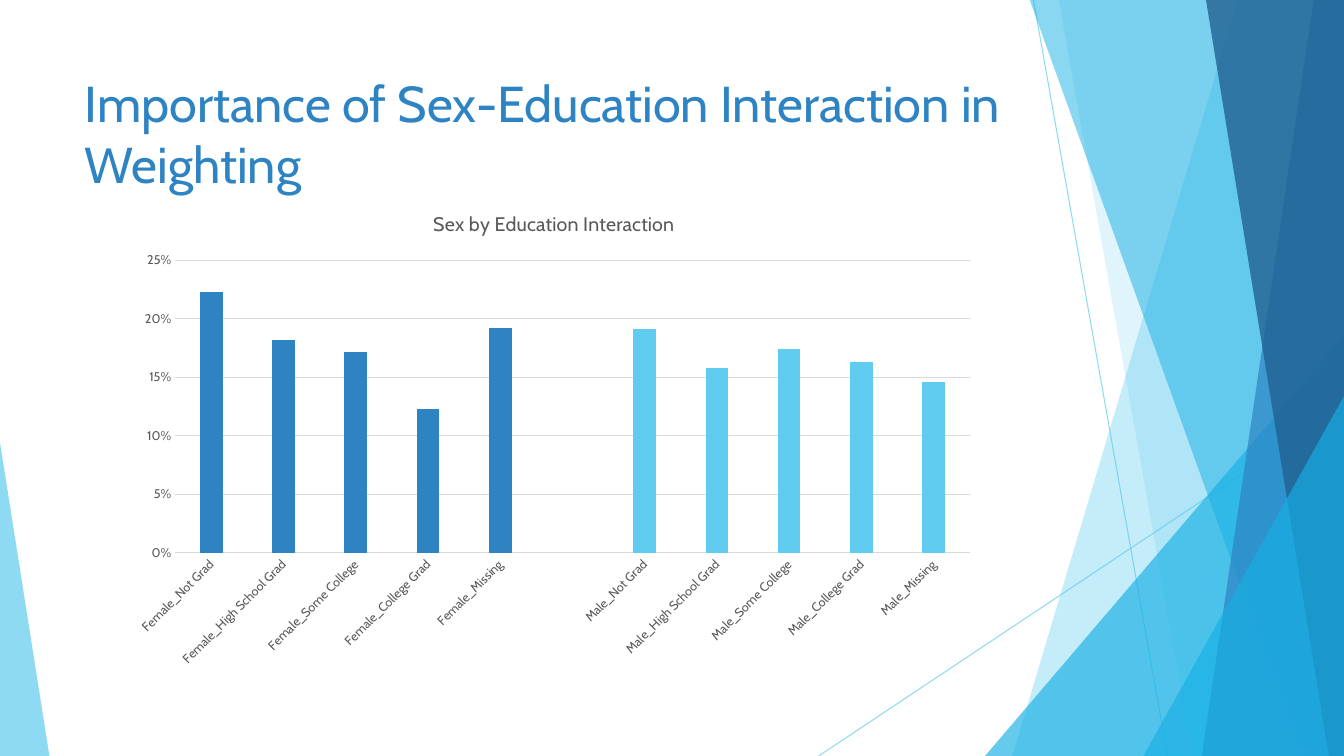
from lxml import etree
from pptx import Presentation
from pptx.chart.data import CategoryChartData
from pptx.dml.color import RGBColor
from pptx.enum.chart import XL_CHART_TYPE, XL_TICK_MARK
from pptx.enum.shapes import MSO_CONNECTOR, MSO_SHAPE
from pptx.enum.text import MSO_ANCHOR, MSO_AUTO_SIZE, PP_ALIGN
from pptx.oxml.ns import qn
from pptx.util import Pt

COLUMNS = XL_CHART_TYPE.COLUMN_CLUSTERED
NO_TICK = XL_TICK_MARK.NONE
STRAIGHT = MSO_CONNECTOR.STRAIGHT
TRIANGLE = MSO_SHAPE.ISOSCELES_TRIANGLE
TOP = MSO_ANCHOR.TOP
NO_FIT = MSO_AUTO_SIZE.NONE
LEFT = PP_ALIGN.LEFT

PX = 9144
WIDTH, HEIGHT = 1333, 750
FONT = "Cabin"
BLUE, SKY, CYAN, NAVY = "2E83C3", "5FCBEF", "17B0E4", "226292"
GRAY, GRID = "595959", "D9D9D9"

TITLE = "Importance of Sex-Education Interaction in Weighting"
TITLE_BOX = (74, 67, 940, 144)
CHART_TITLE = "Sex by Education Interaction"
CHART_BOX = (120, 190, 859, 481)
LEVELS = ["Not Grad", "High School Grad", "Some College", "College Grad", "Missing"]
FEMALE = [0.223, 0.182, 0.171, 0.123, 0.192]
MALE = [0.191, 0.158, 0.174, 0.163, 0.146]

RAYS = [((1025, 0), (1158, HEIGHT)), ((WIDTH, 403), (812, HEIGHT))]
BAND, WEDGE = "band", "wedge"
FACETS = [
    (BAND, (1228, 1004), SKY, 36),
    (BAND, (1050, 1183), SKY, 20),
    (WEDGE, (977, 333, 356, 417, 1), CYAN, 66),
    (BAND, (1021, 1291), CYAN, 50),
    (BAND, (1303, 1192), BLUE, 70),
    (BAND, (1196, 1318), NAVY, 80),
    (WEDGE, (1134, 393, 199, 357, 1), CYAN, 66),
    (WEDGE, (0, 439, 49, 311, 0), SKY, 70),
]


def color(value):
    return RGBColor.from_string(value)


def emu(values):
    return [value * PX for value in values]


def set_alpha(fill_parent, percent):
    tint = fill_parent.find(".//" + qn("a:srgbClr"))
    etree.SubElement(tint, qn("a:alpha")).set("val", str(percent * 1000))


def style(font, size, tint):
    font.name, font.size, font.bold = FONT, Pt(size), False
    font.color.rgb = color(tint)


def add_ray(slide, start, end):
    ray = slide.shapes.add_connector(STRAIGHT, *emu(start + end))
    ray.line.color.rgb = color(SKY)
    ray.line.width = Pt(0.75)
    properties = ray._element.spPr
    set_alpha(properties, 70)
    etree.SubElement(properties, qn("a:effectLst"))


def add_facet(slide, kind, geometry, tint, alpha):
    if kind == BAND:
        top_x, bottom_x = geometry
        builder = slide.shapes.build_freeform(top_x, -1, scale=PX)
        builder.add_line_segments([(WIDTH, -1), (WIDTH, HEIGHT), (bottom_x, HEIGHT)])
        facet = builder.convert_to_shape()
    else:
        facet = slide.shapes.add_shape(TRIANGLE, *emu(geometry[:4]))
        facet.adjustments[0] = geometry[4]
    facet.shadow.inherit = False
    facet.fill.solid()
    facet.fill.fore_color.rgb = color(tint)
    facet.line.fill.background()
    set_alpha(facet._element.spPr, alpha)


def set_title(slide):
    title = slide.shapes.title
    title.left, title.top, title.width, title.height = emu(TITLE_BOX)
    frame = title.text_frame
    frame.text = TITLE
    frame.word_wrap, frame.auto_size = True, NO_FIT
    frame.vertical_anchor = TOP
    para = frame.paragraphs[0]
    para.alignment = LEFT
    style(para.runs[0].font, 36, BLUE)


def add_bars(slide):
    data = CategoryChartData(number_format="0%")
    data.categories = [f"Female_{level}" for level in LEVELS] + [""] + [
        f"Male_{level}" for level in LEVELS]
    data.add_series("Series 1", FEMALE + [None] + MALE)
    chart = slide.shapes.add_chart(COLUMNS, *emu(CHART_BOX), data).chart
    style(chart.font, 10, "000000")
    chart.has_legend = False
    chart.has_title = True
    chart.chart_title.include_in_layout = False
    heading = chart.chart_title.text_frame
    heading.text = CHART_TITLE
    style(heading.paragraphs[0].runs[0].font, 14, GRAY)

    plot = chart.plots[0]
    plot.gap_width, plot.overlap, plot.vary_by_categories = 219, -27, False
    series = plot.series[0]
    series.format.fill.solid()
    series.format.fill.fore_color.rgb = color(SKY)
    for index in range(len(FEMALE)):
        fill = series.points[index].format.fill
        fill.solid()
        fill.fore_color.rgb = color(BLUE)

    categories, values = chart.category_axis, chart.value_axis
    for axis in (categories, values):
        axis.major_tick_mark = axis.minor_tick_mark = NO_TICK
        style(axis.tick_labels.font, 9, GRAY)
    categories._element.find(qn("c:txPr")).find(qn("a:bodyPr")).set("rot", "-2700000")
    values.minimum_scale, values.maximum_scale, values.major_unit = 0, 0.25, 0.05
    values.tick_labels.number_format = "0%"
    values.tick_labels.number_format_is_linked = False
    values.format.line.fill.background()
    for line in (categories.format.line, values.major_gridlines.format.line):
        line.color.rgb = color(GRID)
        line.width = Pt(0.75)


def main():
    deck = Presentation()
    deck.slide_width, deck.slide_height = emu((WIDTH, HEIGHT))
    page = deck.slides.add_slide(deck.slide_layouts[5])
    for start, end in RAYS:
        add_ray(page, start, end)
    for facet in FACETS:
        add_facet(page, *facet)
    set_title(page)
    add_bars(page)
    deck.save("out.pptx")


if __name__ == "__main__":
    main()
